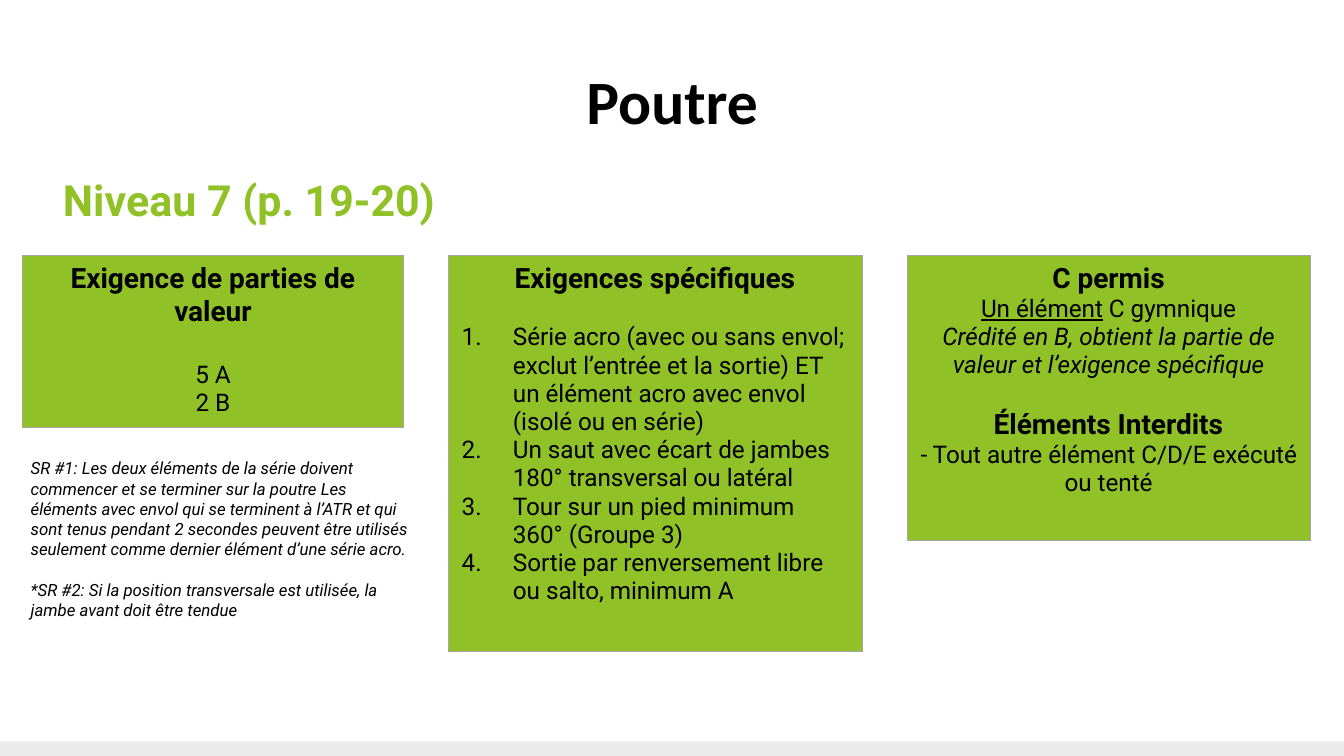
from dataclasses import dataclass

import lxml.etree
import pptx
import pptx.dml.color
import pptx.enum.shapes
import pptx.enum.text
import pptx.oxml
import pptx.oxml.ns
import pptx.util

Cm = pptx.util.Cm
Pt = pptx.util.Pt
RGBColor = pptx.dml.color.RGBColor
PP_ALIGN = pptx.enum.text.PP_ALIGN
AUTO_SIZE = pptx.enum.text.MSO_AUTO_SIZE
qn = pptx.oxml.ns.qn

GREEN = RGBColor(0x90, 0xC1, 0x26)
BLACK = RGBColor(0, 0, 0)
GREY = RGBColor(0xA5, 0xA5, 0xA5)
PALE = RGBColor(0xEB, 0xEB, 0xEB)
FONT = "Roboto"
HEAD, BODY, NOTE = 15, 13, 9
HEAD_LINE, BODY_LINE, NOTE_LINE = 17.6, 15.2, 10.8


@dataclass
class Line:
    """One paragraph; lead is an underlined opening and gap the space before."""
    text: str
    size: int = BODY
    bold: bool = False
    italic: bool = False
    lead: str = ""
    gap: float = 0
    numbered: bool = False
    align: PP_ALIGN = PP_ALIGN.CENTER
    color: RGBColor = BLACK
    font: str = FONT


CARDS = [
    (7.19, 3.25, [
        Line("Exigence de parties de valeur", HEAD, bold=True),
        Line("5 A", gap=HEAD_LINE),
        Line("2 B"),
    ]),
    (7.82, 7.49, [
        Line("Exigences spécifiques", HEAD, bold=True),
        Line("Série acro (avec ou sans envol; exclut l’entrée et la sortie) ET "
             "un élément acro avec envol (isolé ou en série)",
             gap=BODY_LINE, numbered=True, align=PP_ALIGN.LEFT),
        Line("Un saut avec écart de jambes 180° transversal ou latéral",
             numbered=True, align=PP_ALIGN.LEFT),
        Line("Tour sur un pied minimum 360° (Groupe 3)",
             numbered=True, align=PP_ALIGN.LEFT),
        Line("Sortie par renversement libre ou salto, minimum A",
             numbered=True, align=PP_ALIGN.LEFT),
    ]),
    (7.62, 5.38, [
        Line("C permis", HEAD, bold=True),
        Line(" C gymnique", lead="Un élément"),
        Line("Crédité en B, obtient la partie de valeur et l’exigence spécifique",
             italic=True),
        Line("Éléments Interdits", HEAD, bold=True, gap=BODY_LINE),
        Line("- Tout autre élément C/D/E exécuté ou tenté"),
    ]),
]
NOTES = [
    Line("SR #1: Les deux éléments de la série doivent commencer et se terminer "
         "sur la poutre Les éléments avec envol qui se terminent à l’ATR et qui "
         "sont tenus pendant 2 secondes peuvent être utilisés seulement comme "
         "dernier élément d’une série acro.",
         NOTE, italic=True, align=PP_ALIGN.LEFT),
    Line("*SR #2: Si la position transversale est utilisée, la jambe avant doit "
         "être tendue",
         NOTE, italic=True, gap=NOTE_LINE, align=PP_ALIGN.LEFT),
]


def number(p):
    """Give a paragraph an automatic number and a hanging indent."""
    pPr = p._p.get_or_add_pPr()
    pPr.set("marL", str(Cm(0.97)))
    pPr.set("indent", str(-Cm(0.97)))
    lxml.etree.SubElement(pPr, qn("a:buAutoNum"), type="arabicPeriod")


def write(tf, lines):
    """Fill a text frame with formatted lines."""
    tf.text = "\n".join(line.lead or line.text for line in lines)
    for p, line in zip(tf.paragraphs, lines):
        p.alignment = line.align
        p.space_before = Pt(line.gap)
        if line.numbered:
            number(p)
        if line.lead:
            p.runs[0].font.underline = True
            p.add_run().text = line.text
        for r in p.runs:
            r.font.name = line.font
            r.font.size = Pt(line.size)
            r.font.bold = line.bold
            r.font.italic = line.italic
            r.font.color.rgb = line.color


def set_frame(tf, margin_x=0, margin_y=0):
    """Wrap a text frame, let it grow and set its margins."""
    tf.word_wrap = True
    tf.auto_size = AUTO_SIZE.SHAPE_TO_FIT_TEXT
    tf.margin_left = tf.margin_right = Cm(margin_x)
    tf.margin_top = tf.margin_bottom = Cm(margin_y)


def add_strip(slide, left, top, width, height):
    """Draw the pale strip at the foot of the slide."""
    sp = slide.shapes.add_shape(pptx.enum.shapes.MSO_SHAPE.RECTANGLE,
                                Cm(left), Cm(top), Cm(width), Cm(height))
    sp.shadow.inherit = False
    sp.fill.solid()
    sp.fill.fore_color.rgb = PALE
    sp.line.fill.background()


def place_title(slide, left, top, width, height):
    """Move and format the title placeholder."""
    sp = slide.shapes.title
    sp.left, sp.top, sp.width, sp.height = Cm(left), Cm(top), Cm(width), Cm(height)
    set_frame(sp.text_frame)
    sp.text_frame.vertical_anchor = pptx.enum.text.MSO_ANCHOR.MIDDLE
    write(sp.text_frame, [Line("Poutre", 33, bold=True, font="Calibri")])


def add_text(slide, left, top, width, height, lines, margins=(0, 0)):
    """Add a text box holding the given lines."""
    sp = slide.shapes.add_textbox(Cm(left), Cm(top), Cm(width), Cm(height))
    set_frame(sp.text_frame, *margins)
    write(sp.text_frame, lines)


def set_borders(cell):
    """Outline a cell with thin grey lines."""
    tcPr = cell._tc.get_or_add_tcPr()
    for side in ("a:lnL", "a:lnR", "a:lnT", "a:lnB"):
        ln = lxml.etree.SubElement(tcPr, qn(side), w=str(Pt(0.5)))
        fill = lxml.etree.SubElement(ln, qn("a:solidFill"))
        lxml.etree.SubElement(fill, qn("a:srgbClr"), val=str(GREY))


def add_card(slide, left, top, width, height, lines):
    """Add a green one-cell table holding the given lines."""
    table = slide.shapes.add_table(1, 1, Cm(left), Cm(top),
                                   Cm(width), Cm(height)).table
    table.first_row = table.horz_banding = False
    cell = table.cell(0, 0)
    set_borders(cell)
    cell.fill.solid()
    cell.fill.fore_color.rgb = GREEN
    write(cell.text_frame, lines)


def add_cards(slide, left, top, gap):
    """Set the cards side by side with equal gaps."""
    for width, height, lines in CARDS:
        add_card(slide, left, top, width, height, lines)
        left += width + gap


def main():
    """Build and save the slide."""
    prs = pptx.Presentation()
    prs.slide_width, prs.slide_height = Cm(25.4), Cm(14.29)
    slide = prs.slides.add_slide(prs.slide_layouts[5])
    add_strip(slide, 0, 14.02, 25.4, 0.27)
    place_title(slide, 1.02, 1.32, 23.37, 1.14)
    add_text(slide, 1.19, 3.28, 23.57, 0.99,
             [Line("Niveau 7 (p. 19-20)", 23, bold=True,
                   align=PP_ALIGN.LEFT, color=GREEN)])
    add_cards(slide, 0.43, 4.83, 0.85)
    add_text(slide, 0.33, 8.53, 7.72, 3.71, NOTES, (0.25, 0.13))
    prs.save("out.pptx")


if __name__ == "__main__":
    main()
